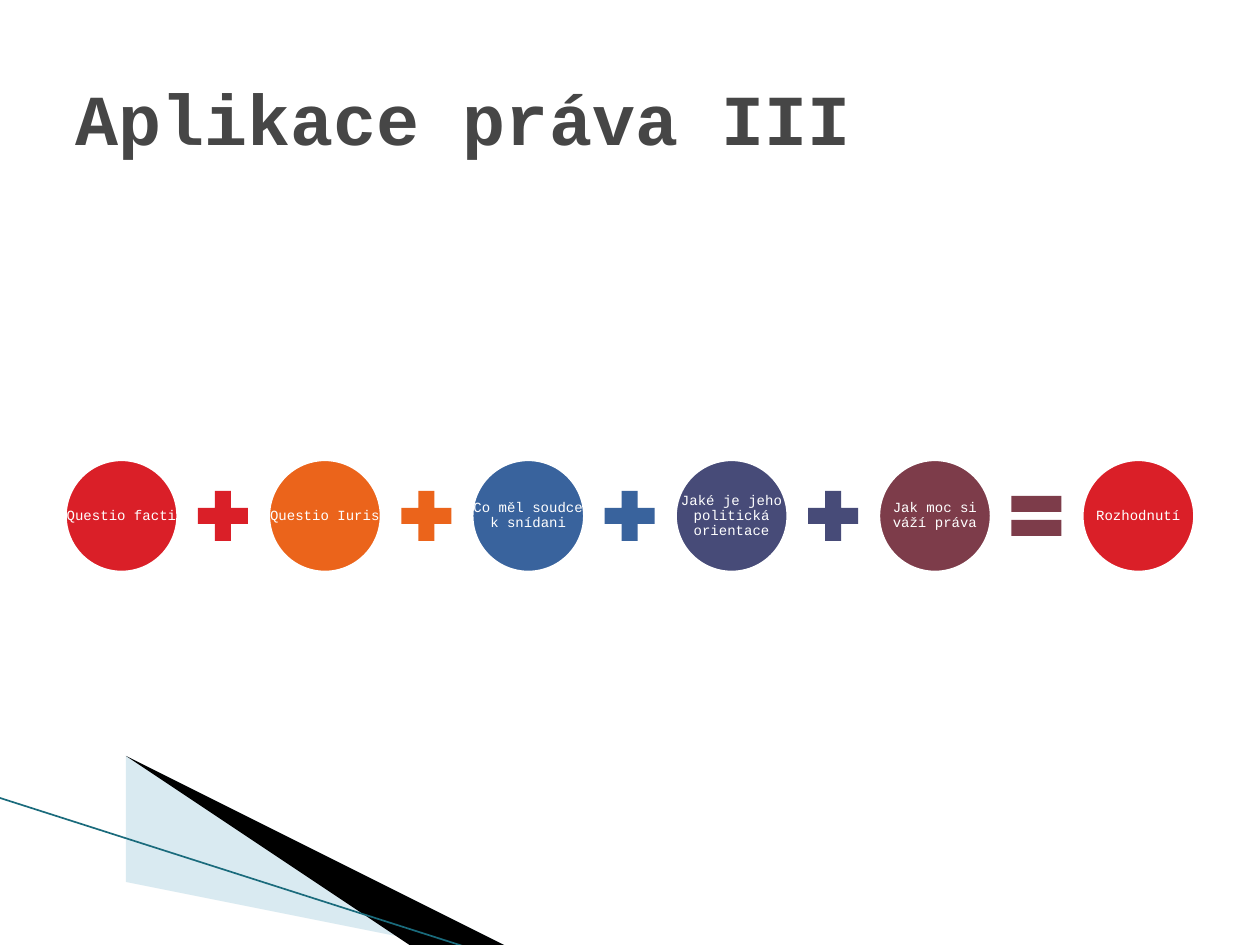
from dataclasses import dataclass

from lxml import etree
from pptx import Presentation
from pptx.dml.color import RGBColor
from pptx.enum import shapes as kinds, text as txt
from pptx.oxml.ns import qn
from pptx.util import Inches, Pt

FONT = "Courier New"
WHITE = "FFFFFF"
FIRST_LEFT, STEP = 0.5, 1.614
CIRCLE_TOP, CIRCLE_SIZE = 3.63, 0.93
SIGN_OFFSET, SIGN_SIZE = 1.0, 0.54
PLUS = kinds.MSO_SHAPE.MATH_PLUS
EQUAL = kinds.MSO_SHAPE.MATH_EQUAL


@dataclass
class Term:
    label: str
    color: str
    sign: kinds.MSO_SHAPE | None = PLUS


@dataclass
class Wedge:
    points: list[tuple[float, float]]
    color: str
    opacity: int = 100


TERMS = [
    Term("Questio facti", "DA1F28"),
    Term("Questio Iuris", "EB641B"),
    Term("Co měl soudce k snídani", "39639D"),
    Term("Jaké je jeho politická orientace", "474B78"),
    Term("Jak moc si váží práva", "7D3C4A", EQUAL),
    Term("Rozhodnutí", "DA1F28", None),
]

WEDGES = [
    Wedge([(0.55, 6.51), (5.95, 7.51), (4.56, 7.51), (0.55, 6.5)], "A0CBDC", 40),
    Wedge([(0.53, 6.49), (4.57, 7.51), (3.72, 7.52), (0.54, 6.5)], "000000"),
]


def rgb(color: str) -> RGBColor:
    return RGBColor.from_string(color)


def paint(shape, color: str) -> None:
    shape.shadow.inherit = False
    shape.fill.solid()
    shape.fill.fore_color.rgb = rgb(color)
    shape.line.fill.background()


def style_run(run, size: float, color: str, bold: bool = False) -> None:
    run.font.name = FONT
    run.font.size = Pt(size)
    run.font.bold = bold
    run.font.color.rgb = rgb(color)


def draw_wedge(slide, wedge: Wedge) -> None:
    builder = slide.shapes.build_freeform(*wedge.points[0], scale=Inches(1))
    builder.add_line_segments(wedge.points[1:], close=True)
    shape = builder.convert_to_shape()
    paint(shape, wedge.color)
    if wedge.opacity < 100:
        fill_color = shape._element.spPr.find(qn("a:solidFill"))[0]
        alpha = etree.SubElement(fill_color, qn("a:alpha"))
        alpha.set("val", str(wedge.opacity * 1000))


def draw_edge(slide) -> None:
    edge = slide.shapes.add_connector(
        kinds.MSO_CONNECTOR.STRAIGHT,
        Inches(-0.01), Inches(6.33), Inches(3.71), Inches(7.52))
    edge.line.color.rgb = rgb("1A6B7C")
    edge.line.width = Pt(0.95)
    etree.SubElement(edge._element.spPr, qn("a:effectLst"))


def draw_term(group, term: Term, left: float) -> None:
    """Draw a circle, its label over the full width, and the sign after it."""
    box = [Inches(v) for v in (left, CIRCLE_TOP, CIRCLE_SIZE, CIRCLE_SIZE)]
    circle = group.shapes.add_shape(kinds.MSO_SHAPE.OVAL, *box)
    paint(circle, term.color)
    circle.line.color.rgb = rgb(WHITE)
    circle.line.width = Pt(4.33)

    frame = group.shapes.add_textbox(*box).text_frame
    frame.word_wrap = True
    frame.vertical_anchor = txt.MSO_ANCHOR.MIDDLE
    frame.margin_left = frame.margin_right = Inches(0.01)
    frame.margin_top = frame.margin_bottom = Inches(0.01)
    frame.text = term.label
    label = frame.paragraphs[0]
    label.alignment = txt.PP_ALIGN.CENTER
    label.line_spacing = 0.9
    style_run(label.runs[0], 8, WHITE)

    if term.sign is not None:
        sign_top = CIRCLE_TOP + (CIRCLE_SIZE - SIGN_SIZE) / 2
        sign = group.shapes.add_shape(
            term.sign, Inches(left + SIGN_OFFSET), Inches(sign_top),
            Inches(SIGN_SIZE), Inches(SIGN_SIZE))
        paint(sign, term.color)


def set_title(slide, heading: str) -> None:
    title = slide.shapes.title
    title.left, title.top = Inches(0.5), Inches(0.3)
    title.width, title.height = Inches(9), Inches(1.25)
    frame = title.text_frame
    frame.text = heading
    frame.vertical_anchor = txt.MSO_ANCHOR.MIDDLE
    frame.paragraphs[0].alignment = txt.PP_ALIGN.LEFT
    style_run(frame.paragraphs[0].runs[0], 41, "464646", bold=True)


def main() -> None:
    prs = Presentation()
    prs.slide_width, prs.slide_height = Inches(10), Inches(7.5)
    slide = prs.slides.add_slide(prs.slide_layouts[5])
    set_title(slide, "Aplikace práva III")
    for wedge in WEDGES:
        draw_wedge(slide, wedge)
    draw_edge(slide)
    equation = slide.shapes.add_group_shape()
    for i, term in enumerate(TERMS):
        draw_term(equation, term, FIRST_LEFT + i * STEP)
    prs.save("out.pptx")


if __name__ == "__main__":
    main()
